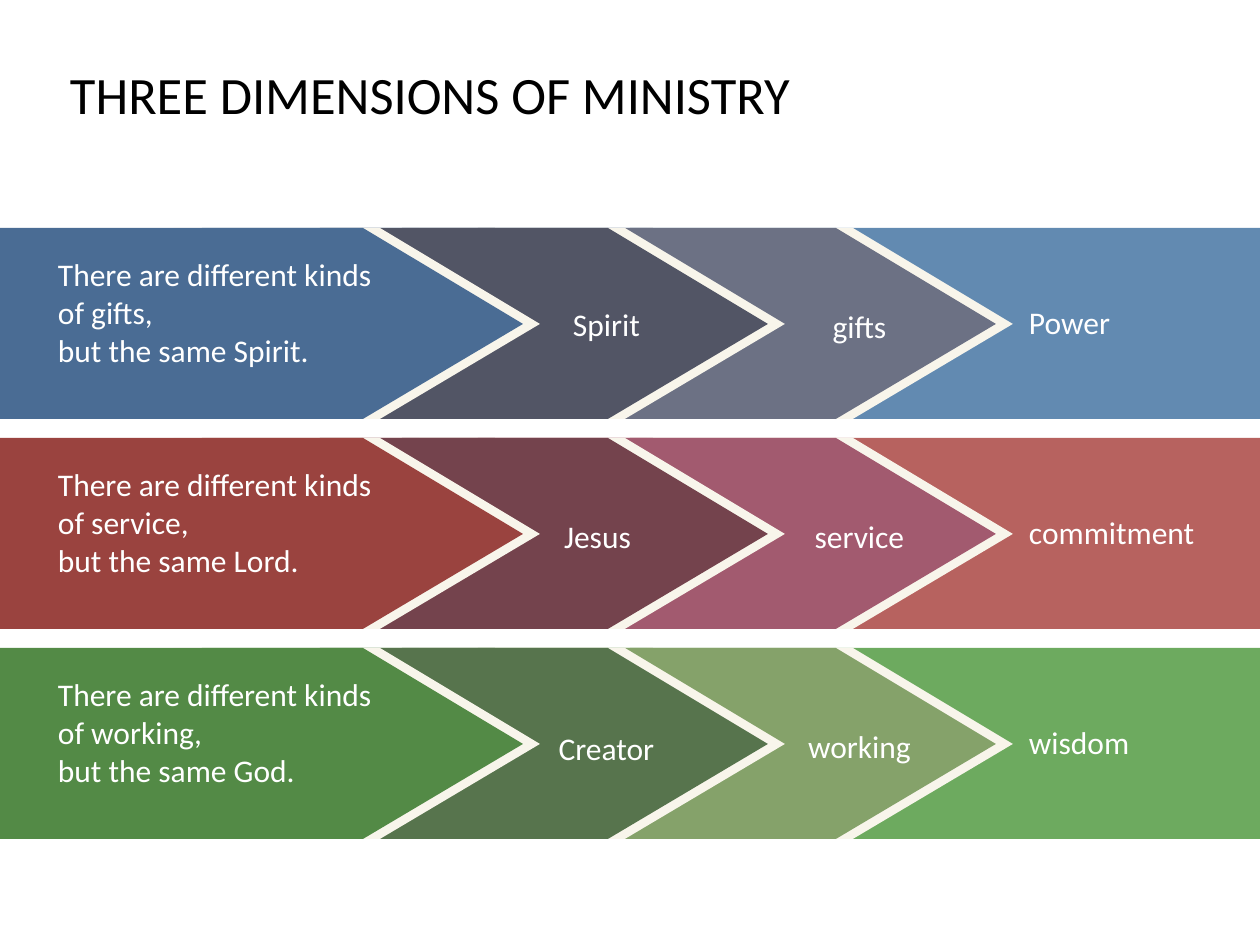
from pptx import Presentation
from pptx.dml.color import RGBColor
from pptx.enum.shapes import MSO_SHAPE
from pptx.enum.text import MSO_ANCHOR, PP_ALIGN
from pptx.util import Emu, Pt

RECTANGLE = MSO_SHAPE.RECTANGLE
TOP, MIDDLE = MSO_ANCHOR.TOP, MSO_ANCHOR.MIDDLE
LEFT, CENTER = PP_ALIGN.LEFT, PP_ALIGN.CENTER
PX = 914400 // 126

COLORS = {"cream": "F8F5EB", "white": "FFFFFF", "black": "000000"}
ROW_TOP, ROW_STEP, ROW_HEIGHT = 228, 210, 191
POINT, EDGE = 160, 17  # length of an arrow point, width of its cream edge

# Arrows from back to front: left, left of cream edge, shoulder, left of backing
ARROWS = [(630, 647, 836, 478), (402, 419, 608, 320), (-13, 174, 363, None)]

# Arrow colours follow the order of ARROWS; the person label has its own place
ROWS = [
    {"bar": "628AB1", "arrows": ["6C7184", "525565", "4A6C94"],
     "verse": ["There are different kinds of gifts,", "but the same Spirit."],
     "person": ("Spirit", 507, 67), "act": "gifts", "result": "Power"},
    {"bar": "B7625F", "arrows": ["A25A6F", "74434D", "9A433F"],
     "verse": ["There are different kinds of service,", "but the same Lord."],
     "person": ("Jesus", 498, 69), "act": "service", "result": "commitment"},
    {"bar": "6DAA5F", "arrows": ["85A26A", "57744D", "538A46"],
     "verse": ["There are different kinds of working,", "but the same God."],
     "person": ("Creator", 507, 71), "act": "working", "result": "wisdom"},
]

presentation = Presentation()
presentation.slide_width, presentation.slide_height = Emu(1260 * PX), Emu(945 * PX)
slide = presentation.slides.add_slide(presentation.slide_layouts[6])


def add_block(points, color):
    """Draw a filled outline; four points make a plain rectangle."""
    if len(points) == 4:
        (left, top), (right, bottom) = points[0], points[2]
        shape = slide.shapes.add_shape(RECTANGLE, left * PX, top * PX,
                                       (right - left) * PX, (bottom - top) * PX)
    else:
        builder = slide.shapes.build_freeform(*points[0], scale=PX)
        builder.add_line_segments(points[1:], close=True)
        shape = builder.convert_to_shape()
    shape.shadow.inherit = False
    shape.fill.solid()
    shape.fill.fore_color.rgb = RGBColor.from_string(color)
    shape.line.fill.background()


def add_text(lines, left, top, width, height, size=18, color="white",
             align=LEFT, anchor=TOP, spacing=1.0):
    box = slide.shapes.add_textbox(left * PX, top * PX, width * PX, height * PX)
    frame = box.text_frame
    frame.word_wrap = True
    frame.vertical_anchor = anchor
    frame.margin_left = frame.margin_right = 6 * PX
    frame.margin_top = frame.margin_bottom = 6 * PX
    frame.text = "\n".join(lines)
    for paragraph in frame.paragraphs:
        paragraph.alignment = align
        paragraph.line_spacing = spacing
        paragraph.font.name = "Calibri"
        paragraph.font.size = Pt(size)
        paragraph.font.color.rgb = RGBColor.from_string(COLORS[color])


for index, row in enumerate(ROWS):
    top = ROW_TOP + index * ROW_STEP
    middle, bottom = top + ROW_HEIGHT / 2, top + ROW_HEIGHT

    # Bar behind the arrows
    add_block([(202, top), (1291, top), (1291, bottom), (202, bottom)], row["bar"])

    # Arrows, each on its cream edge
    for (left, edge_left, shoulder, backing), color in zip(ARROWS, row["arrows"]):
        if backing is not None:
            right = backing + 175
            add_block([(backing, top), (right, top), (right, bottom),
                       (backing, bottom)], color)
        for start, turn, fill in ((edge_left, shoulder + EDGE, COLORS["cream"]),
                                  (left, shoulder, color)):
            add_block([(start, top), (start, bottom), (turn, bottom),
                       (turn + POINT, middle), (turn, top)], fill)

    # Labels
    person, person_left, person_drop = row["person"]
    add_text([row["result"]], 1023, top + 69, 233, 53)
    add_text(row["verse"], 52, top + 21, 344, 134)
    add_text([person], person_left, top + person_drop, 199, 53,
             align=CENTER, spacing=1.1)
    add_text([row["act"]], 760, top + 69, 199, 53, align=CENTER, spacing=1.1)

# Title
add_text(["THREE DIMENSIONS OF MINISTRY"], 64, 19, 927, 150,
         size=30, color="black", anchor=MIDDLE)

presentation.save("out.pptx")
